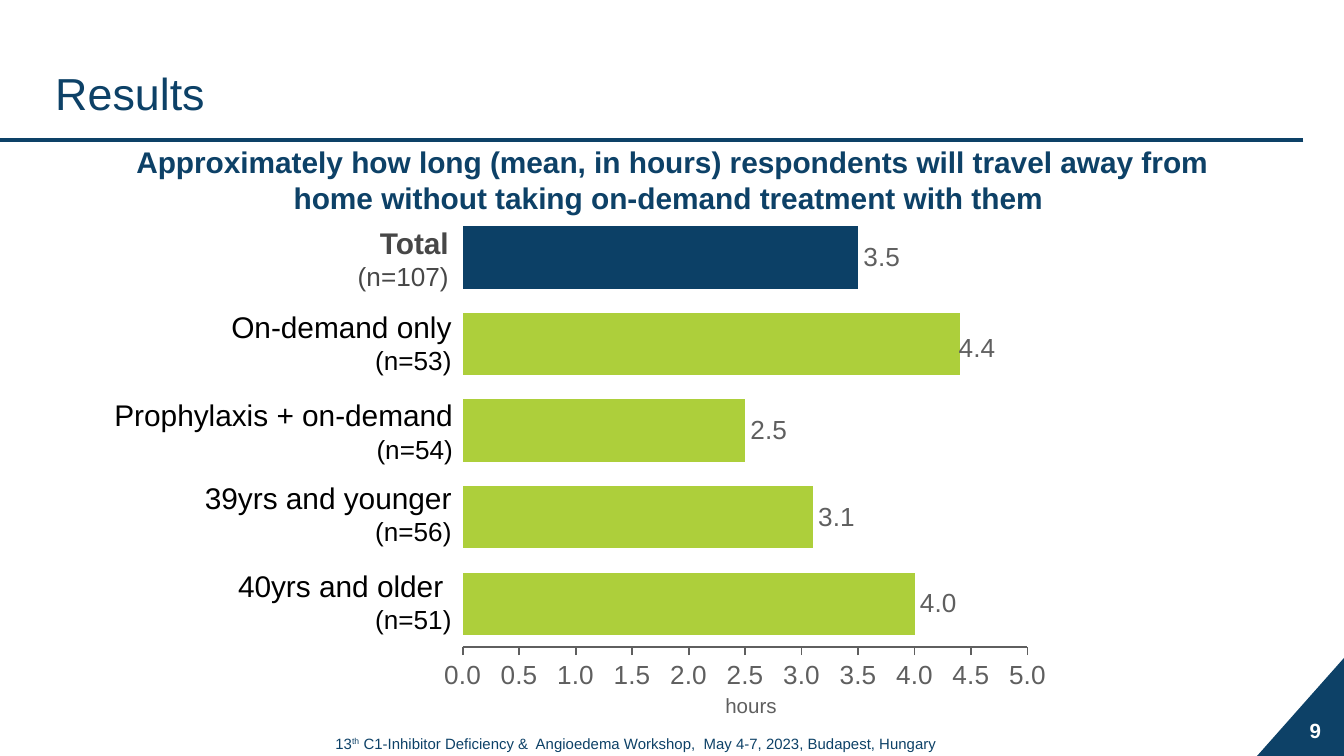
from dataclasses import dataclass

import pptx
import pptx.chart.data
import pptx.dml.color
import pptx.enum.chart
import pptx.enum.shapes
import pptx.enum.text
import pptx.oxml
import pptx.oxml.ns
import pptx.util

PX = 9525  # EMU in one px, slide of 960 x 540
FONT = "Arial"
NAVY, DARK, GREEN = "0D4167", "0C4066", "ADCF3B"
GREY, SLATE, BLACK, WHITE = "5F5F5F", "474747", "000000", "FFFFFF"
ALIGN = pptx.enum.text.PP_ALIGN
ANCHOR = pptx.enum.text.MSO_ANCHOR


@dataclass
class Run:
    text: str
    size: int
    color: str = NAVY
    bold: bool = False
    sup: bool = False


@dataclass
class Box:
    left: int
    top: int
    width: int
    height: int
    lines: list[list[Run]]
    align: ALIGN = ALIGN.CENTER
    anchor: ANCHOR = ANCHOR.TOP


@dataclass
class Group:
    name: str
    note: str
    hours: float
    right: int
    top: int
    color: str = BLACK
    bold: bool = False
    fill: str = GREEN


GROUPS = [
    Group("Total", "(n=107)", 3.5, 330, 156, SLATE, True, DARK),
    Group("On-demand only", "(n=53)", 4.4, 332, 216),
    Group("Prophylaxis + on-demand", "(n=54)", 2.5, 333, 279),
    Group("39yrs and younger", "(n=56)", 3.1, 332, 338),
    Group("40yrs and older ", "(n=51)", 4.0, 332, 401),
]

TEXTS = [
    Box(30, 19, 900, 71, [[Run("Results", 24)]], ALIGN.LEFT, ANCHOR.BOTTOM),
    Box(919, 507, 41, 29, [[Run("9", 11, WHITE, True)]], anchor=ANCHOR.MIDDLE),
    Box(73, 98, 815, 61, [[Run(
        "Approximately how long (mean, in hours) respondents will travel away "
        "from home without taking on-demand treatment with them ", 16, bold=True)]]),
    Box(132, 520, 645, 23, [[
        Run("13", 8), Run("th", 8, sup=True),
        Run(" C1-Inhibitor Deficiency &  Angioedema Workshop,  "
            "May 4-7, 2023, Budapest, Hungary", 8)]]),
    Box(493, 490, 87, 28, [[Run("hours", 11, GREY)]]),
]


def rgb(code: str) -> pptx.dml.color.RGBColor:
    return pptx.dml.color.RGBColor.from_string(code)


def style(font, size: int, color: str, bold: bool = False) -> None:
    font.name, font.size, font.bold = FONT, pptx.util.Pt(size), bold
    font.color.rgb = rgb(color)


def paint(part, color: str) -> None:
    part.fill.solid()
    part.fill.fore_color.rgb = rgb(color)


def write(slide, box: Box) -> None:
    shape = slide.shapes.add_textbox(
        box.left * PX, box.top * PX, box.width * PX, box.height * PX)
    frame = shape.text_frame
    frame.word_wrap = True
    frame.vertical_anchor = box.anchor
    for i, line in enumerate(box.lines):
        para = frame.add_paragraph() if i else frame.paragraphs[0]
        para.alignment = box.align
        for item in line:
            run = para.add_run()
            run.text = item.text
            style(run.font, item.size, item.color, item.bold)
            if item.sup:
                run.font._element.set("baseline", "30000")


def label(slide, group: Group) -> None:
    width = 303
    lines = [[Run(group.name, 16, group.color, group.bold)],
             [Run(group.note, 14, group.color)]]
    write(slide, Box(group.right - width, group.top, width, 47, lines, ALIGN.RIGHT))


def layout(parent, index: int, **parts) -> None:
    """Give a chart part a manual place."""
    for old in parent.findall(pptx.oxml.ns.qn("c:layout")):
        parent.remove(old)
    body = "".join(f'<c:{key} val="{val}"/>' for key, val in parts.items())
    parent.insert(index, pptx.oxml.parse_xml(
        f'<c:layout {pptx.oxml.ns.nsdecls("c")}>'
        f"<c:manualLayout>{body}</c:manualLayout></c:layout>"))


def plot(slide, groups: list[Group]) -> None:
    rows = groups[::-1]  # bars run from the bottom up
    data = pptx.chart.data.CategoryChartData(number_format="0.0")
    data.categories = [str(i + 1) for i in range(len(rows))]
    data.add_series("Series 1", [row.hours for row in rows])
    chart = slide.shapes.add_chart(
        pptx.enum.chart.XL_CHART_TYPE.BAR_CLUSTERED,
        314 * PX, 153 * PX, 458 * PX, 346 * PX, data).chart
    chart.has_legend = chart.has_title = False
    style(chart.font, 14, GREY)
    layout(chart._chartSpace.chart.plotArea, 0, layoutTarget="inner",
           xMode="edge", yMode="edge", x=0.036, y=0, w=0.881, h=0.894)

    # Axes
    chart.category_axis.visible = False
    axis = chart.value_axis
    axis.minimum_scale, axis.maximum_scale, axis.major_unit = 0, 5, 0.5
    axis.has_major_gridlines = False
    axis.major_tick_mark = pptx.enum.chart.XL_TICK_MARK.OUTSIDE
    axis.tick_labels.number_format = "0.0"
    axis.tick_labels.number_format_is_linked = False
    style(axis.tick_labels.font, 14, GREY)
    axis.format.line.color.rgb = rgb(GREY)
    axis.format.line.width = pptx.util.Pt(1)

    # Bars
    bars = chart.plots[0]
    bars.gap_width, bars.overlap, bars.vary_by_categories = 39, 20, False
    series = bars.series[0]
    paint(series.format, GREEN)
    for i, row in enumerate(rows):
        if row.fill != GREEN:
            paint(series.points[i].format, row.fill)

    # Values, with the longest bar's one moved slightly
    end = pptx.enum.chart.XL_LABEL_POSITION.OUTSIDE_END
    marks = series.data_labels
    marks.show_value, marks.position = True, end
    marks.number_format, marks.number_format_is_linked = "0.0", False
    style(marks.font, 14, GREY)
    top = max(range(len(rows)), key=lambda i: rows[i].hours)
    mark = series.points[top].data_label
    mark.position = end
    style(mark.font, 14, GREY)
    layout(mark._dLbl, 1, x=-0.01, y=0.01)


def decorate(slide) -> None:
    corner = slide.shapes.add_shape(
        pptx.enum.shapes.MSO_SHAPE.RIGHT_TRIANGLE, 893 * PX, 474 * PX, 71 * PX, 63 * PX)
    corner.rotation = 270
    corner.shadow.inherit = False
    paint(corner, NAVY)
    corner.line.fill.background()
    rule = slide.shapes.add_connector(
        pptx.enum.shapes.MSO_CONNECTOR.STRAIGHT, 931 * PX, 100 * PX, 0, 100 * PX)
    rule.line.color.rgb = rgb(NAVY)
    rule.line.width = pptx.util.Pt(2)
    rule._element.spPr.append(pptx.oxml.parse_xml(
        f'<a:effectLst {pptx.oxml.ns.nsdecls("a")}/>'))


def main() -> None:
    deck = pptx.Presentation()
    deck.slide_width, deck.slide_height = 960 * PX, 540 * PX
    slide = deck.slides.add_slide(deck.slide_layouts[6])
    decorate(slide)
    plot(slide, GROUPS)
    for group in GROUPS:
        label(slide, group)
    for box in TEXTS:
        write(slide, box)
    deck.save("out.pptx")


if __name__ == "__main__":
    main()
